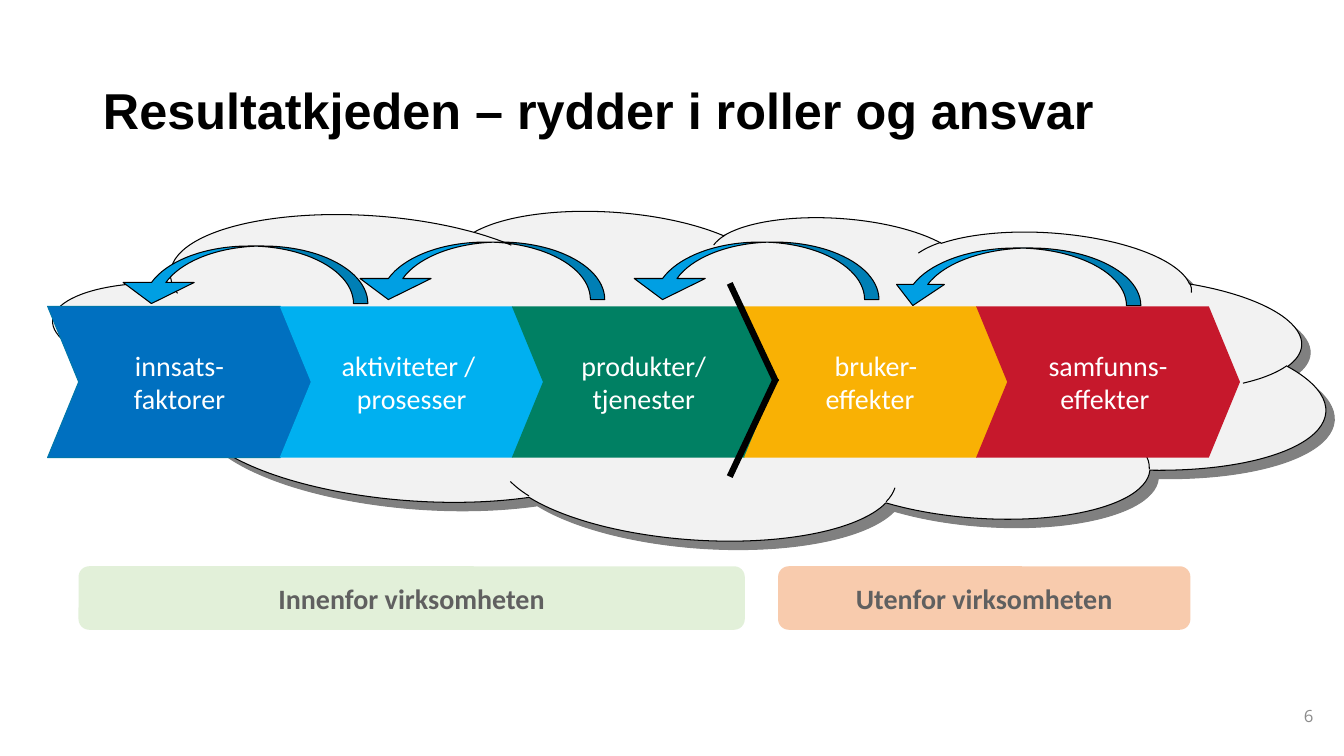
from lxml import etree
from pptx import Presentation
from pptx.dml.color import RGBColor
from pptx.enum.shapes import MSO_CONNECTOR, MSO_SHAPE
from pptx.enum.text import MSO_ANCHOR, MSO_AUTO_SIZE, PP_ALIGN
from pptx.oxml.ns import qn
from pptx.util import Cm, Pt

CLOUD = MSO_SHAPE.CLOUD
CHEVRON = MSO_SHAPE.CHEVRON
ROUND = MSO_SHAPE.ROUNDED_RECTANGLE
CURVE = MSO_SHAPE.CURVED_DOWN_ARROW
LINE = MSO_CONNECTOR.STRAIGHT
LEFT, CENTER, RIGHT = PP_ALIGN.LEFT, PP_ALIGN.CENTER, PP_ALIGN.RIGHT
MIDDLE = MSO_ANCHOR.MIDDLE
FIXED = MSO_AUTO_SIZE.NONE


def color(code):
    return RGBColor.from_string(code)


class Page:
    font = "Calibri"
    size = 20
    black = "000000"
    white = "FFFFFF"

    def __init__(self, deck):
        self.slide = deck.slides.add_slide(deck.slide_layouts[5])
        self.shapes = self.slide.shapes

    def letter(self, shape, lines, code, align=CENTER, size=size, font=font, bold=False, wrap=False):
        frame = shape.text_frame
        frame.auto_size = FIXED
        frame.word_wrap = wrap
        frame.vertical_anchor = MIDDLE
        for num, line in enumerate(lines):
            para = frame.add_paragraph() if num else frame.paragraphs[0]
            para.alignment = align
            for part, text in enumerate(line.split("\n")):
                if part:
                    para.add_line_break()
                run = para.add_run()
                run.text = text
                run.font.name = font
                run.font.size = Pt(size)
                run.font.bold = bold
                run.font.color.rgb = color(code)

    def title(self, text, x, y, w, h):
        box = self.shapes.title
        box.left, box.top, box.width, box.height = Cm(x), Cm(y), Cm(w), Cm(h)
        self.letter(box, [text], self.black, LEFT, 36, "Arial", True, True)
        box.text_frame.paragraphs[0].line_spacing = 0.9

    def label(self, text, x, y, w, h):
        box = self.shapes.add_textbox(Cm(x), Cm(y), Cm(w), Cm(h))
        self.letter(box, [text], "8C8C8C", RIGHT, 12, "Open Sans", wrap=True)

    def shape(self, kind, x, y, w, h, fill, edge=None, adjust=()):
        item = self.shapes.add_shape(kind, Cm(x), Cm(y), Cm(w), Cm(h))
        item.shadow.inherit = False
        item.fill.solid()
        item.fill.fore_color.rgb = color(fill)
        if edge:
            item.line.color.rgb = color(edge)
            item.line.width = Pt(0.75)
        else:
            item.line.fill.background()
        for num, value in enumerate(adjust):
            item.adjustments[num] = value
        return item

    def cloud(self, x, y, w, h):
        item = self.shape(CLOUD, x, y, w, h, "F2F2F2", self.black)
        item.rotation = 3.9
        effects = item._element.spPr.find(qn("a:effectLst"))
        shade = etree.SubElement(effects, qn("a:outerShdw"), dist=str(Pt(8.5)),
                                 dir="2700000", algn="ctr", rotWithShape="0")
        etree.SubElement(shade, qn("a:srgbClr"), val="808080")

    def step(self, lines, x, y, w, h, fill, edge=None):
        item = self.shape(CHEVRON, x, y, w, h, fill, edge, [0.206])
        self.letter(item, lines, self.white)

    def band(self, text, x, y, w, h, fill):
        item = self.shape(ROUND, x, y, w, h, fill)
        self.letter(item, [text], "606060", bold=True)

    def arrow(self, x, y, w, h, bend):
        item = self.shape(CURVE, x, y, w, h, "009FE3", self.black, [0.25, bend, 0.366])
        item.rotation = 180
        item._element.spPr.find(qn("a:xfrm")).set("flipV", "1")

    def stroke(self, x1, y1, x2, y2):
        line = self.shapes.add_connector(LINE, Cm(x1), Cm(y1), Cm(x2), Cm(y2))
        line.line.color.rgb = color(self.black)
        line.line.width = Pt(4.5)
        etree.SubElement(line._element.spPr, qn("a:effectLst"))


def main():
    deck = Presentation()
    deck.slide_width, deck.slide_height = Cm(33.87), Cm(19.05)
    page = Page(deck)
    page.cloud(1.3, 5.23, 32.13, 8.33)
    page.title("Resultatkjeden – rydder i roller og ansvar", 2.34, 1.02, 30.1, 3.68)
    page.label("6", 32.11, 17.55, 1.24, 0.99)

    steps = [
        (["innsats-", "faktorer"], "0070C0", "0077AA"),
        (["aktiviteter / \nprosesser"], "00B0F0", None),
        (["produkter/", "tjenester"], "008063", None),
        (["bruker-", "effekter\t"], "F9B104", None),
        (["samfunns-", "effekter "], "C6182C", None),
    ]
    for num, (lines, fill, edge) in enumerate(steps):
        page.step(lines, 1.2 + 5.85 * num, 7.72, 6.65, 3.81, fill, edge)

    page.stroke(18.39, 7.14, 19.56, 9.63)
    page.stroke(19.56, 9.53, 18.39, 12.01)

    page.band("Innenfor virksomheten", 1.98, 14.27, 16.79, 1.6, "E2F0D9")
    page.band("Utenfor virksomheten", 19.61, 14.27, 10.39, 1.6, "F8CBAD")

    arrows = [(22.4, 6.25, 0.832), (8.89, 6.1, 1.235), (15.8, 6.1, 1.235), (2.92, 6.2, 1.235)]
    for x, y, bend in arrows:
        page.arrow(x, y, 6.35, 1.45, bend)

    deck.save("out.pptx")


if __name__ == "__main__":
    main()
